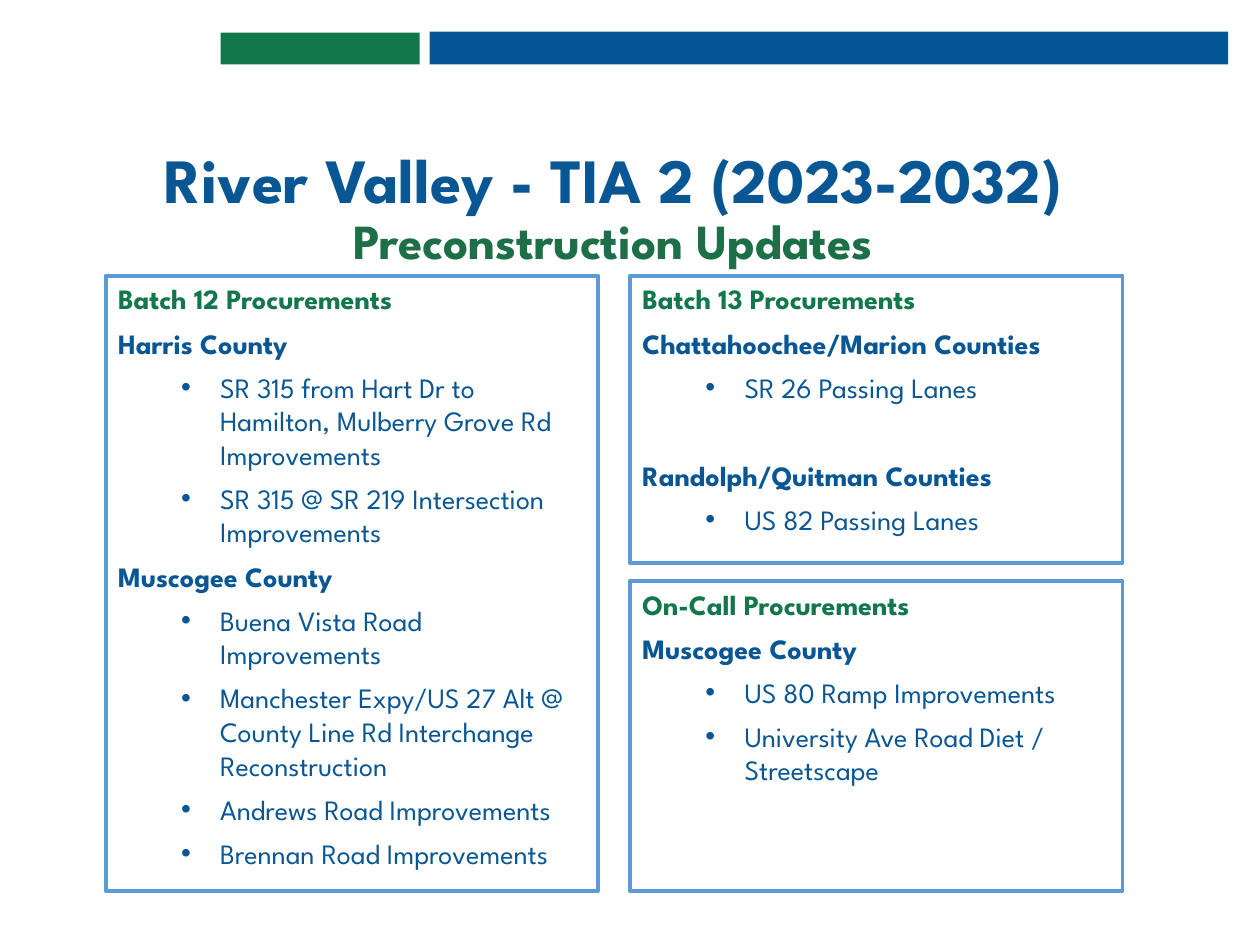
from lxml import etree
from pptx import Presentation
from pptx.dml.color import RGBColor
from pptx.enum.shapes import MSO_SHAPE
from pptx.enum.text import MSO_ANCHOR, PP_ALIGN
from pptx.oxml.ns import qn
from pptx.util import Cm, Pt

RECTANGLE = MSO_SHAPE.RECTANGLE
TOP, BOTTOM = MSO_ANCHOR.TOP, MSO_ANCHOR.BOTTOM
LEFT, CENTER = PP_ALIGN.LEFT, PP_ALIGN.CENTER

FONT = "League Spartan"
WHITE, BORDER = "FFFFFF", "5B9BD5"
BAR_BLUE, TEXT_BLUE = "035594", "085694"
GREEN, SUBTITLE_GREEN = "12784B", "1C6F47"

LEFT_COLUMN, RIGHT_COLUMN, COLUMN_WIDTH = 2.13, 12.7, 9.93
PANEL_TOP, PANEL_BOTTOM = 5.56, 17.96
ON_CALL_TOP = 11.71

BATCH_12 = [
    ("Harris County", [
        "SR 315 from Hart Dr to Hamilton, Mulberry Grove Rd Improvements",
        "SR 315 @ SR 219 Intersection Improvements",
    ]),
    ("Muscogee County", [
        "Buena Vista Road Improvements",
        "Manchester Expy/US 27 Alt @ County Line Rd Interchange Reconstruction",
        "Andrews Road Improvements",
        "Brennan Road Improvements",
    ]),
]
BATCH_13 = [
    ("Chattahoochee/Marion Counties", ["SR 26 Passing Lanes"]),
    ("Randolph/Quitman Counties", ["US 82 Passing Lanes"]),
]
ON_CALL = [
    ("Muscogee County", [
        "US 80 Ramp Improvements",
        "University Ave Road Diet / Streetscape",
    ]),
]


def rgb(value):
    return RGBColor.from_string(value)


def write(paragraph, text, size=16, color=TEXT_BLUE, bold=False):
    run = paragraph.add_run()
    run.text = text
    run.font.name = FONT
    run.font.size = Pt(size)
    run.font.bold = bold
    run.font.color.rgb = rgb(color)


def add_bullet(paragraph):
    paragraph.level = 1
    properties = paragraph._p.get_or_add_pPr()
    properties.set("marL", str(Cm(2.06)))
    properties.set("indent", str(-Cm(0.79)))
    etree.SubElement(properties, qn("a:buFont")).set("typeface", "Arial")
    etree.SubElement(properties, qn("a:buChar")).set("char", "•")


class ProcurementSlide:
    """Draws the bars, title and procurement panels on one slide."""

    def __init__(self, slide):
        self.shapes = slide.shapes

    def bar(self, left, top, width, height, fill, border=None):
        bar = self.shapes.add_shape(
            RECTANGLE, Cm(left), Cm(top), Cm(width), Cm(height))
        bar.shadow.inherit = False
        bar.fill.solid()
        bar.fill.fore_color.rgb = rgb(fill)
        if border:
            bar.line.color.rgb = rgb(border)
            bar.line.width = Pt(2.25)
        else:
            bar.line.fill.background()
        return bar

    def title(self, heading, subtitle):
        frame = self.shapes.add_textbox(
            Cm(LEFT_COLUMN), Cm(2.29), Cm(20.47), Cm(3.28)).text_frame
        frame.word_wrap = True
        frame.vertical_anchor = BOTTOM
        paragraph = frame.paragraphs[0]
        paragraph.alignment = CENTER
        paragraph.line_spacing = 0.9
        write(paragraph, heading, size=36, bold=True)
        paragraph.add_line_break()
        write(paragraph, subtitle, size=28, color=SUBTITLE_GREEN, bold=True)

    def panel(self, left, top, height, heading, counties, county_gap=6):
        frame = self.bar(
            left, top, COLUMN_WIDTH, height, WHITE, BORDER).text_frame
        frame.word_wrap = True
        frame.vertical_anchor = TOP
        first = frame.paragraphs[0]
        first.alignment = LEFT
        write(first, heading, color=GREEN, bold=True)
        for index, (county, projects) in enumerate(counties):
            self.entry(frame, county, county_gap if index else 6, bold=True)
            for project in projects:
                self.entry(frame, project, bulleted=True)

    def entry(self, frame, text, space=6, bulleted=False, bold=False):
        paragraph = frame.add_paragraph()
        if bulleted:
            add_bullet(paragraph)
        paragraph.alignment = LEFT
        paragraph.space_before = Pt(space)
        write(paragraph, text, bold=bold)


def main():
    deck = Presentation()
    deck.slide_width, deck.slide_height = Cm(25.4), Cm(19.05)
    page = ProcurementSlide(deck.slides.add_slide(deck.slide_layouts[6]))
    page.bar(8.66, 0.64, 16.1, 0.66, BAR_BLUE)
    page.bar(4.45, 0.66, 4.01, 0.64, GREEN)
    page.panel(RIGHT_COLUMN, ON_CALL_TOP, PANEL_BOTTOM - ON_CALL_TOP,
               "On-Call Procurements", ON_CALL)
    page.panel(RIGHT_COLUMN, PANEL_TOP, 5.79,
               "Batch 13 Procurements", BATCH_13, county_gap=31.2)
    page.panel(LEFT_COLUMN, PANEL_TOP, PANEL_BOTTOM - PANEL_TOP,
               "Batch 12 Procurements", BATCH_12)
    page.title("River Valley - TIA 2 (2023-2032)", "Preconstruction Updates")
    deck.save("out.pptx")


if __name__ == "__main__":
    main()
